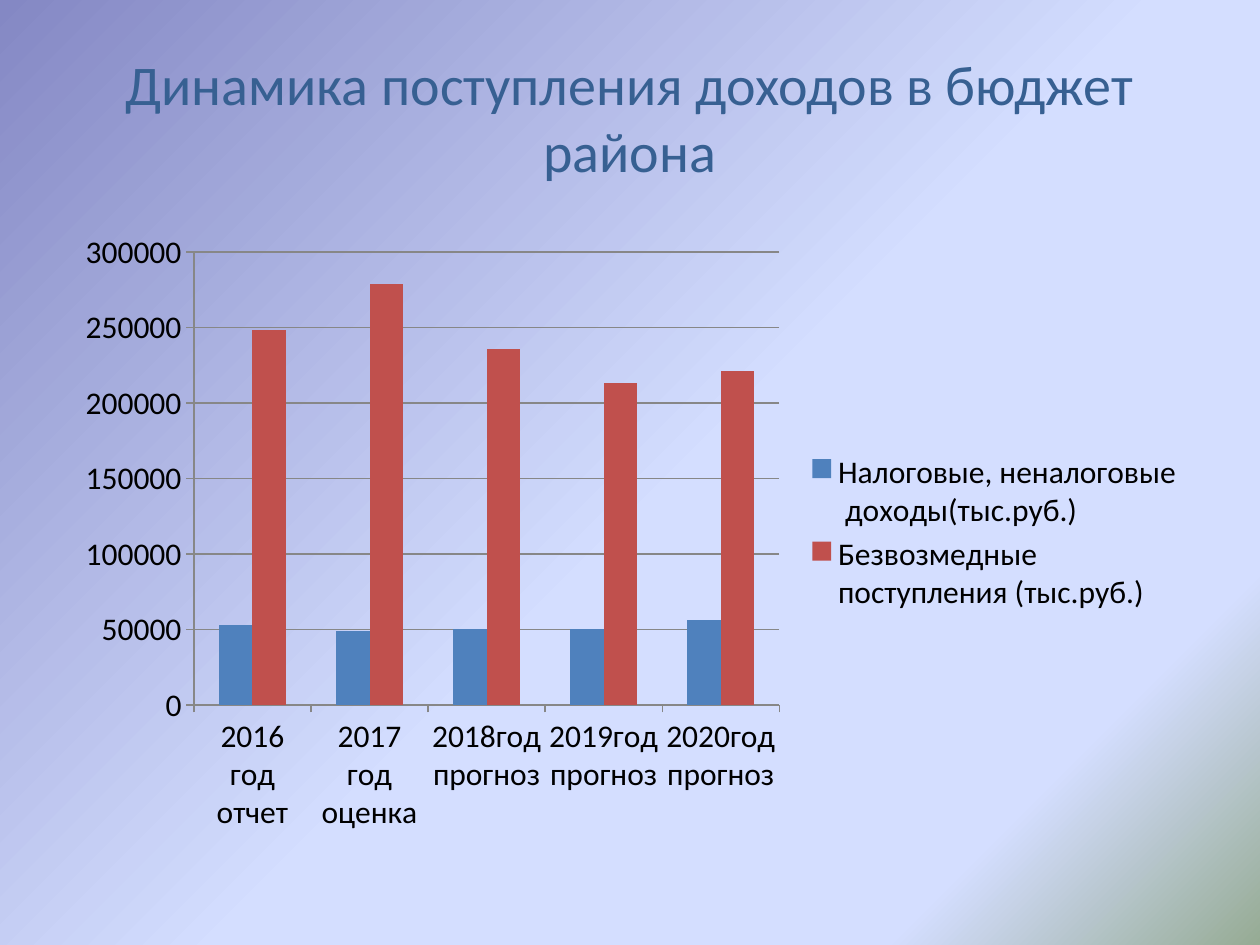
from lxml.etree import SubElement
from pptx import Presentation
from pptx.chart.data import CategoryChartData
from pptx.dml.color import RGBColor
from pptx.enum.chart import XL_CHART_TYPE, XL_LEGEND_POSITION, XL_TICK_MARK
from pptx.enum.text import MSO_ANCHOR, PP_ALIGN
from pptx.oxml.ns import qn
from pptx.util import Pt

FONT = "Calibri"
BACKGROUND_STOPS = [(0, "8488C4"), (53, "D4DEFF"), (83, "D4DEFF"), (100, "96AB94")]
YEARS = ["2016 год отчет", "2017 год оценка", "2018год прогноз",
         "2019год прогноз", "2020год прогноз"]
INCOME = [
    ("Налоговые, неналоговые\n доходы(тыс.руб.)", "4F81BD",
     [53000, 49000, 50000, 50000, 56000]),
    ("Безвозмедные поступления (тыс.руб.)", "C0504D",
     [248000, 279000, 236000, 213000, 221000]),
]


def color(hex_string):
    return RGBColor.from_string(hex_string)


def set_font(font, size, hex_string):
    font.name = FONT
    font.size = Pt(size)
    font.color.rgb = color(hex_string)


def set_gradient_background(slide, stops, angle):
    """Fill the background with (percent, colour) stops, angle clockwise."""
    fill = slide.background.fill
    fill.gradient()
    fill.gradient_angle = 360 - angle
    stop_list = slide.element.find(".//" + qn("a:gsLst"))
    for stop in list(stop_list):
        stop_list.remove(stop)
    for percent, hex_string in stops:
        stop = SubElement(stop_list, qn("a:gs"), pos=str(percent * 1000))
        SubElement(stop, qn("a:srgbClr"), val=hex_string)


def add_title(slide, text):
    shape = slide.shapes.add_textbox(Pt(36), Pt(21.6), Pt(648), Pt(90))
    frame = shape.text_frame
    frame.word_wrap = True
    frame.vertical_anchor = MSO_ANCHOR.MIDDLE
    paragraph = frame.paragraphs[0]
    paragraph.text = text
    paragraph.alignment = PP_ALIGN.CENTER
    set_font(paragraph.font, 32, "376092")


def style_line(line):
    line.color.rgb = color("878787")
    line.width = Pt(0.75)


def add_income_chart(slide):
    data = CategoryChartData(number_format="General")
    data.categories = YEARS
    for name, _, values in INCOME:
        data.add_series(name, values)
    chart = slide.shapes.add_chart(
        XL_CHART_TYPE.COLUMN_CLUSTERED, Pt(36), Pt(126), Pt(648), Pt(356.4), data).chart
    set_font(chart.font, 18, "000000")
    chart.has_title = False
    chart.has_legend = True
    chart.legend.position = XL_LEGEND_POSITION.RIGHT
    chart.legend.include_in_layout = False

    for axis in (chart.category_axis, chart.value_axis):
        axis.major_tick_mark = XL_TICK_MARK.OUTSIDE
        axis.minor_tick_mark = XL_TICK_MARK.NONE
        style_line(axis.format.line)
    chart.value_axis.minimum_scale = 0
    chart.value_axis.maximum_scale = 300000
    chart.value_axis.major_unit = 50000
    style_line(chart.value_axis.major_gridlines.format.line)

    plot = chart.plots[0]
    plot.vary_by_categories = False
    plot.gap_width = 150
    plot.overlap = 0
    for series, (_, hex_string, _) in zip(plot.series, INCOME):
        series.format.fill.solid()
        series.format.fill.fore_color.rgb = color(hex_string)


def main():
    presentation = Presentation()
    presentation.slide_width = Pt(720)
    presentation.slide_height = Pt(540)
    slide = presentation.slides.add_slide(presentation.slide_layouts[6])
    set_gradient_background(slide, BACKGROUND_STOPS, 45)
    add_title(slide, "Динамика поступления доходов в бюджет района")
    add_income_chart(slide)
    presentation.save("out.pptx")


if __name__ == "__main__":
    main()
